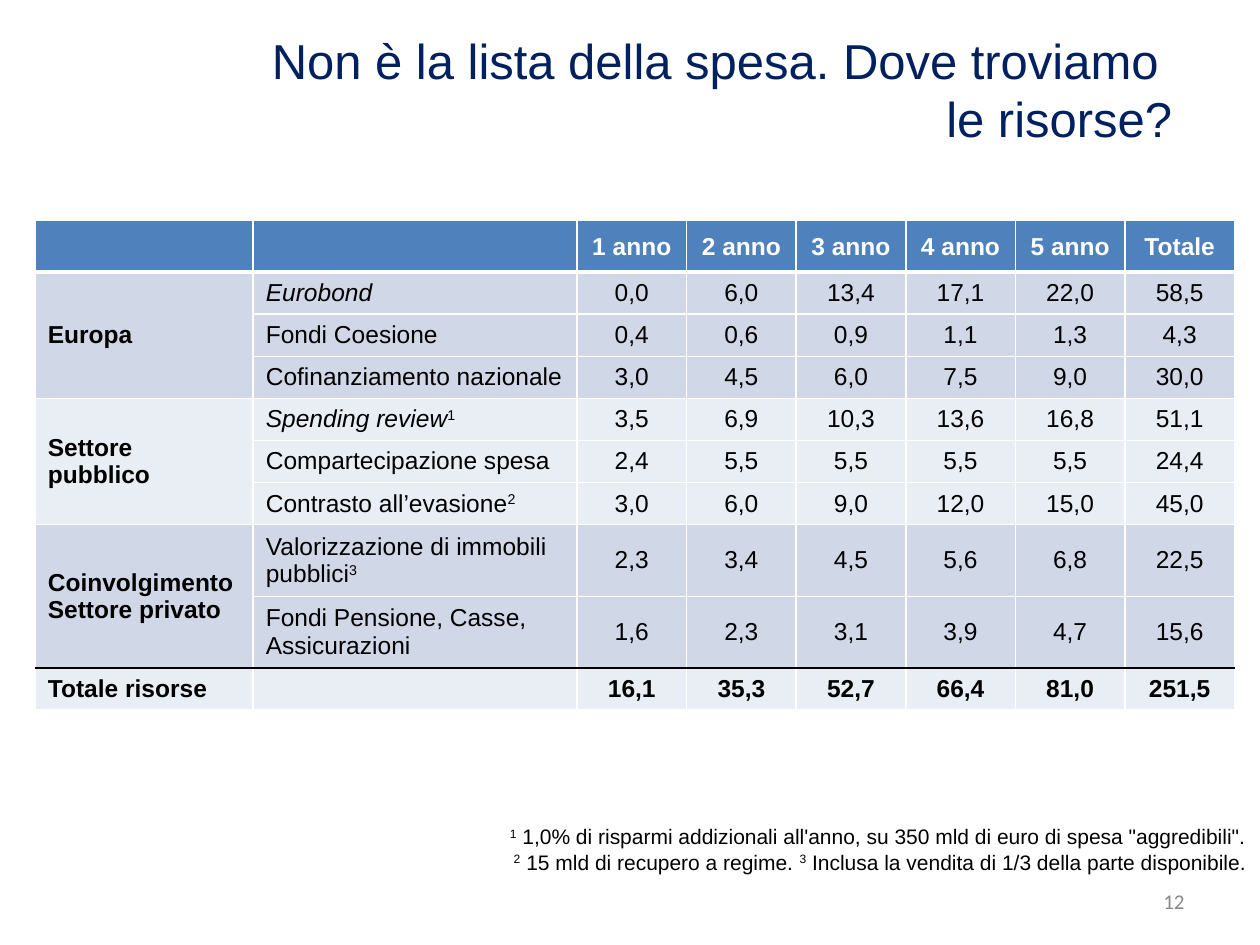
from lxml import etree
from pptx import Presentation
from pptx.dml.color import RGBColor
from pptx.enum.text import MSO_ANCHOR, PP_ALIGN
from pptx.oxml.ns import qn
from pptx.util import Inches, Pt

LEFT, CENTER, RIGHT = PP_ALIGN.LEFT, PP_ALIGN.CENTER, PP_ALIGN.RIGHT
TOP, MIDDLE = MSO_ANCHOR.TOP, MSO_ANCHOR.MIDDLE
WHITE, BLACK, NAVY, GREY = "FFFFFF", "000000", "002060", "898989"
BLUE, DARK_BAND, LIGHT_BAND = "4F81BD", "D0D8E8", "E9EDF4"

HEADER = ["", "", "1 anno", "2 anno", "3 anno", "4 anno", "5 anno", "Totale"]
GROUPS = [
    ("Europa", [
        ("Eurobond", "0,0 6,0 13,4 17,1 22,0 58,5"),
        ("Fondi Coesione", "0,4 0,6 0,9 1,1 1,3 4,3"),
        ("Cofinanziamento nazionale", "3,0 4,5 6,0 7,5 9,0 30,0"),
    ]),
    ("Settore pubblico", [
        ("Spending review^1", "3,5 6,9 10,3 13,6 16,8 51,1"),
        ("Compartecipazione spesa", "2,4 5,5 5,5 5,5 5,5 24,4"),
        ("Contrasto all’evasione^2", "3,0 6,0 9,0 12,0 15,0 45,0"),
    ]),
    ("Coinvolgimento\nSettore privato", [
        ("Valorizzazione di immobili pubblici^3", "2,3 3,4 4,5 5,6 6,8 22,5"),
        ("Fondi Pensione, Casse, Assicurazioni", "1,6 2,3 3,1 3,9 4,7 15,6"),
    ]),
    ("Totale risorse", [("", "16,1 35,3 52,7 66,4 81,0 251,5")]),
]
ITALIC_LABELS = ("Eurobond", "Spending review^1")
COL_WIDTHS = [1.73, 2.57] + [0.87] * 6
ROW_HEIGHTS = [0.41] + [0.33] * 6 + [0.57] * 2 + [0.33]


def rgb(color):
    """Turn a hex string into a colour."""
    return RGBColor.from_string(color)


def write(tf, text, size, color, align=LEFT, font="Arial", bold=False, italic=False):
    """Fill a text frame; a caret raises the character after it."""
    for i, line in enumerate(text.split("\n")):
        p = tf.paragraphs[0] if i == 0 else tf.add_paragraph()
        p.alignment = align
        head, *rest = line.split("^")
        pieces = [(head, False)]
        for part in rest:
            pieces += [(part[0], True), (part[1:], False)]
        for piece, raised in pieces:
            if not piece:
                continue
            r = p.add_run()
            r.text = piece
            r.font.name, r.font.size = font, Pt(size)
            r.font.bold, r.font.italic = bold, italic and not raised
            r.font.color.rgb = rgb(color)
            if raised:
                r.font._element.set("baseline", "30000")


def add_text(slide, box, text, size, color, anchor=TOP, font="Arial"):
    """Add a right-aligned text box."""
    tf = slide.shapes.add_textbox(*map(Inches, box)).text_frame
    tf.word_wrap = True
    tf.vertical_anchor = anchor
    write(tf, text, size, color, RIGHT, font)


def set_borders(cell, top=WHITE, bottom=WHITE, bottom_width=1):
    """Draw the four edges of a cell."""
    tc_pr = cell._tc.get_or_add_tcPr()
    edges = [("L", WHITE, 1), ("R", WHITE, 1), ("T", top, 1), ("B", bottom, bottom_width)]
    for side, color, width in edges:
        ln = etree.SubElement(tc_pr, qn(f"a:ln{side}"), w=str(Pt(width)))
        fill = etree.SubElement(ln, qn("a:solidFill"))
        etree.SubElement(fill, qn("a:srgbClr"), val=color)


def fill_cell(cell, text, fill, color=BLACK, align=LEFT, bold=False, italic=False, **borders):
    """Give a cell its borders, fill and text."""
    set_borders(cell, **borders)
    cell.fill.solid()
    cell.fill.fore_color.rgb = rgb(fill)
    cell.vertical_anchor = MIDDLE
    if text:
        write(cell.text_frame, text, 14, color, align, bold=bold, italic=italic)
    else:
        cell.margin_top = cell.margin_bottom = 0


def add_resources_table(slide, box):
    """Add the table of resources by source and year."""
    table = slide.shapes.add_table(len(ROW_HEIGHTS), len(COL_WIDTHS), *map(Inches, box)).table
    for column, width in zip(table.columns, COL_WIDTHS):
        column.width = Inches(width)
    for row, height in zip(table.rows, ROW_HEIGHTS):
        row.height = Inches(height)

    for col, text in enumerate(HEADER):
        cell = table.cell(0, col)
        fill_cell(cell, text, BLUE, WHITE, CENTER, bold=True, bottom_width=3)
        cell.margin_left = cell.margin_right = cell.margin_top = Inches(0.01)
        cell.margin_bottom = 0

    row, total_row = 1, len(ROW_HEIGHTS) - 1
    for index, (group, lines) in enumerate(GROUPS):
        fill = LIGHT_BAND if index % 2 else DARK_BAND
        end = row + len(lines)
        if len(lines) > 1:
            table.cell(row, 0).merge(table.cell(end - 1, 0))
        for offset, (label, values) in enumerate(lines):
            is_total = row == total_row
            texts = [group if offset == 0 else "", label] + values.split()
            for col, text in enumerate(texts):
                last = end if col == 0 else row + 1
                fill_cell(
                    table.cell(row, col), text, fill,
                    align=LEFT if col < 2 else CENTER,
                    bold=is_total or col == 0,
                    italic=text in ITALIC_LABELS,
                    top=BLACK if is_total else WHITE,
                    bottom=BLACK if last == total_row else WHITE,
                )
            row += 1


def build_slide(prs):
    """Build the slide on where the resources come from."""
    slide = prs.slides.add_slide(prs.slide_layouts[6])
    title = "Non è la lista della spesa. Dove troviamo \nle risorse?"
    notes = (
        "^1 1,0% di risparmi addizionali all'anno, su 350 mld di euro di spesa \"aggredibili\".\n"
        "^2 15 mld di recupero a regime. ^3 Inclusa la vendita di 1/3 della parte disponibile."
    )
    add_text(slide, (0.67, 0.19, 8.73, 1.04), title, 28, NAVY)
    add_text(slide, (7.17, 6.95, 2.33, 0.4), "12", 12, GREY, MIDDLE, "Calibri")
    add_resources_table(slide, (0.28, 1.75, 9.5, 3.87))
    add_text(slide, (0, 6.49, 9.99, 0.5), notes, 12, BLACK)


def main():
    """Create and save the presentation."""
    prs = Presentation()
    prs.slide_width, prs.slide_height = Inches(10), Inches(7.5)
    build_slide(prs)
    prs.save("out.pptx")


if __name__ == "__main__":
    main()
